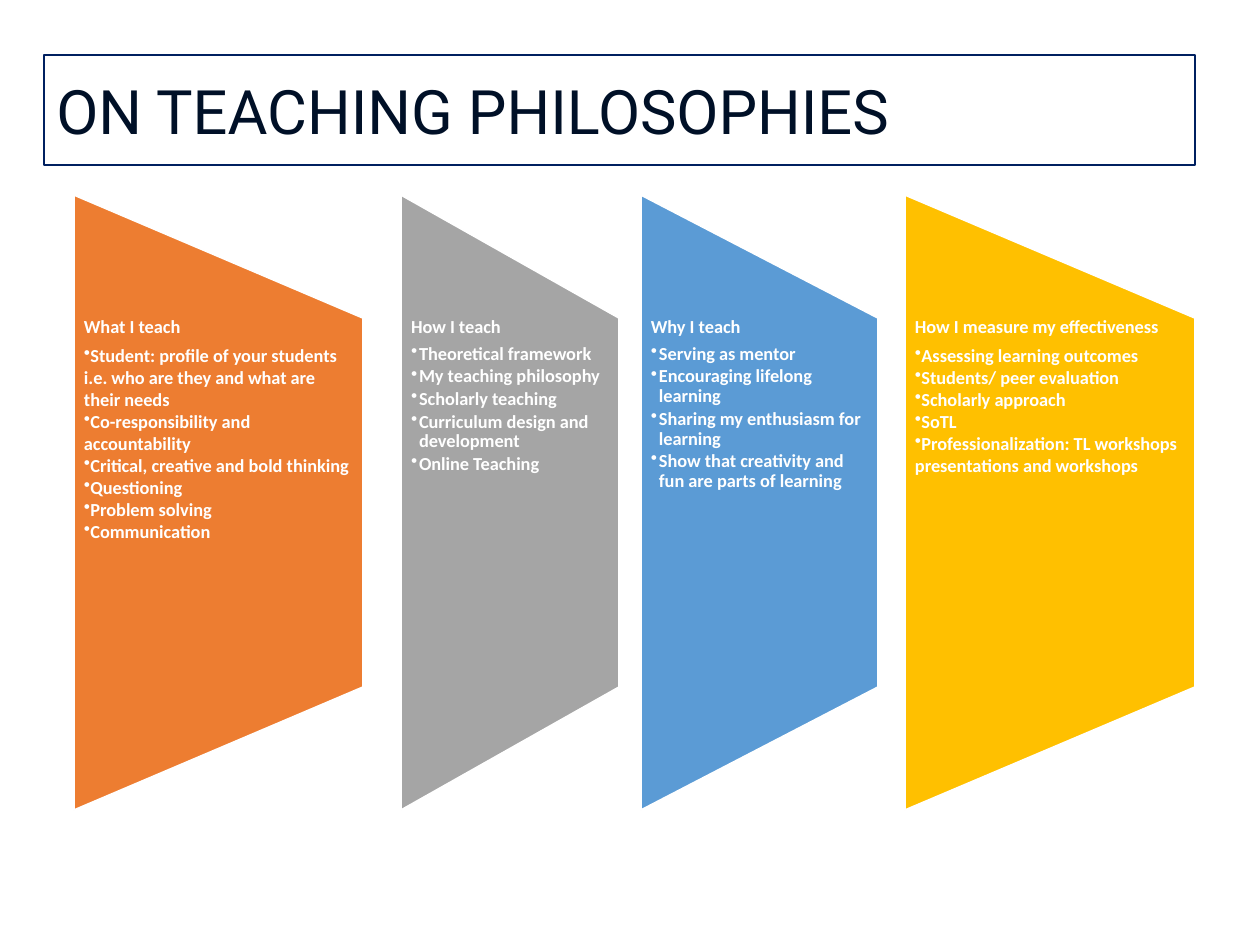
from dataclasses import dataclass

from lxml import etree
from pptx import Presentation, util as u
from pptx.dml.color import RGBColor
from pptx.enum import shapes, text
from pptx.oxml.ns import qn

# Content: heading, fill, left, width, hanging bullets, points
TITLE = "ON TEACHING PHILOSOPHIES"
PANELS = [
    ("What I teach", "ED7D31", 74, 289, False, [
        "Student: profile of your students i.e. who are they and what are their needs",
        "Co-responsibility and accountability",
        "Critical, creative and bold thinking",
        "Questioning",
        "Problem solving",
        "Communication",
    ]),
    ("How I teach", "A5A5A5", 401, 218, True, [
        "Theoretical framework",
        "My teaching philosophy",
        "Scholarly teaching",
        "Curriculum design and development",
        "Online Teaching",
    ]),
    ("Why I teach", "5B9BD5", 641, 237, True, [
        "Serving as mentor",
        "Encouraging lifelong learning",
        "Sharing my enthusiasm for learning",
        "Show that creativity and fun are parts of learning",
    ]),
    ("How I measure my effectiveness", "FFC000", 905, 290, False, [
        "Assessing learning outcomes",
        "Students/ peer evaluation",
        "Scholarly approach",
        "SoTL",
        "Professionalization: TL workshops presentations and workshops",
    ]),
]


@dataclass(frozen=True)
class Theme:
    title_font: str = "Roboto"
    body_font: str = "Calibri"
    title_size: float = 35
    body_size: float = 10.5
    title_ink: str = "001027"
    frame: str = "002060"
    white: str = "FFFFFF"


THEME = Theme()
PANEL_TOP, PANEL_HEIGHT = 195, 615
COPY_TOP, COPY_HEIGHT = 318, 369
HANG = 8


def px(n):
    return u.Emu(round(n * 914400 / 126))


def rgb(code):
    return RGBColor.from_string(code)


def outline(shape, color, points):
    shape.shadow.inherit = False
    shape.line.color.rgb = rgb(color)
    shape.line.width = u.Pt(points)


def add_run(paragraph, words, font, size, color, bold=False):
    run = paragraph.add_run()
    run.text = words
    run.font.name = font
    run.font.size = u.Pt(size)
    run.font.color.rgb = rgb(color)
    run.font.bold = bold


def add_bullet(paragraph, hang):
    props = paragraph._p.get_or_add_pPr()
    props.set("marL", str(px(hang)))
    props.set("indent", str(-px(hang)))
    etree.SubElement(props, qn("a:buChar")).set("char", "•")
    paragraph.level = 1


def add_panel(group, heading, fill, left, width, hanging, points):
    # The preset lies on its side, so its box is set before the quarter turn
    blade = group.shapes.add_shape(
        shapes.MSO_SHAPE.FLOWCHART_MANUAL_OPERATION,
        px(left + (width - PANEL_HEIGHT) / 2),
        px(PANEL_TOP + (PANEL_HEIGHT - width) / 2),
        px(PANEL_HEIGHT), px(width))
    blade.rotation = 270
    blade.fill.solid()
    blade.fill.fore_color.rgb = rgb(fill)
    outline(blade, THEME.white, 1)

    frame = group.shapes.add_textbox(
        px(left), px(COPY_TOP), px(width), px(COPY_HEIGHT)).text_frame
    frame.word_wrap = True
    frame.margin_left, frame.margin_right = px(10), px(9)
    frame.margin_top = frame.margin_bottom = 0
    body_style = (THEME.body_font, THEME.body_size, THEME.white, True)

    head = frame.paragraphs[0]
    head.line_spacing = 0.9
    head.space_after = u.Pt(3.7)
    add_run(head, heading, *body_style)
    for point in points:
        item = frame.add_paragraph()
        add_bullet(item, HANG if hanging else 0)
        if hanging:
            item.line_spacing = 0.9
            item.space_after = u.Pt(1.6)
        add_run(item, point, *body_style)


def main():
    deck = Presentation()
    deck.slide_width, deck.slide_height = px(1260), px(945)
    slide = deck.slides.add_slide(deck.slide_layouts[6])

    # Title in a thin frame
    banner = slide.shapes.add_shape(
        shapes.MSO_SHAPE.RECTANGLE, px(44), px(55), px(1151), px(110))
    banner.fill.background()
    outline(banner, THEME.frame, 0.75)
    banner.text_frame.word_wrap = True
    banner.text_frame.vertical_anchor = text.MSO_ANCHOR.MIDDLE
    title = banner.text_frame.paragraphs[0]
    title.alignment = text.PP_ALIGN.LEFT
    add_run(title, TITLE, THEME.title_font, THEME.title_size, THEME.title_ink)

    # Four panels
    group = slide.shapes.add_group_shape()
    for panel in PANELS:
        add_panel(group, *panel)

    deck.save("out.pptx")


if __name__ == "__main__":
    main()
